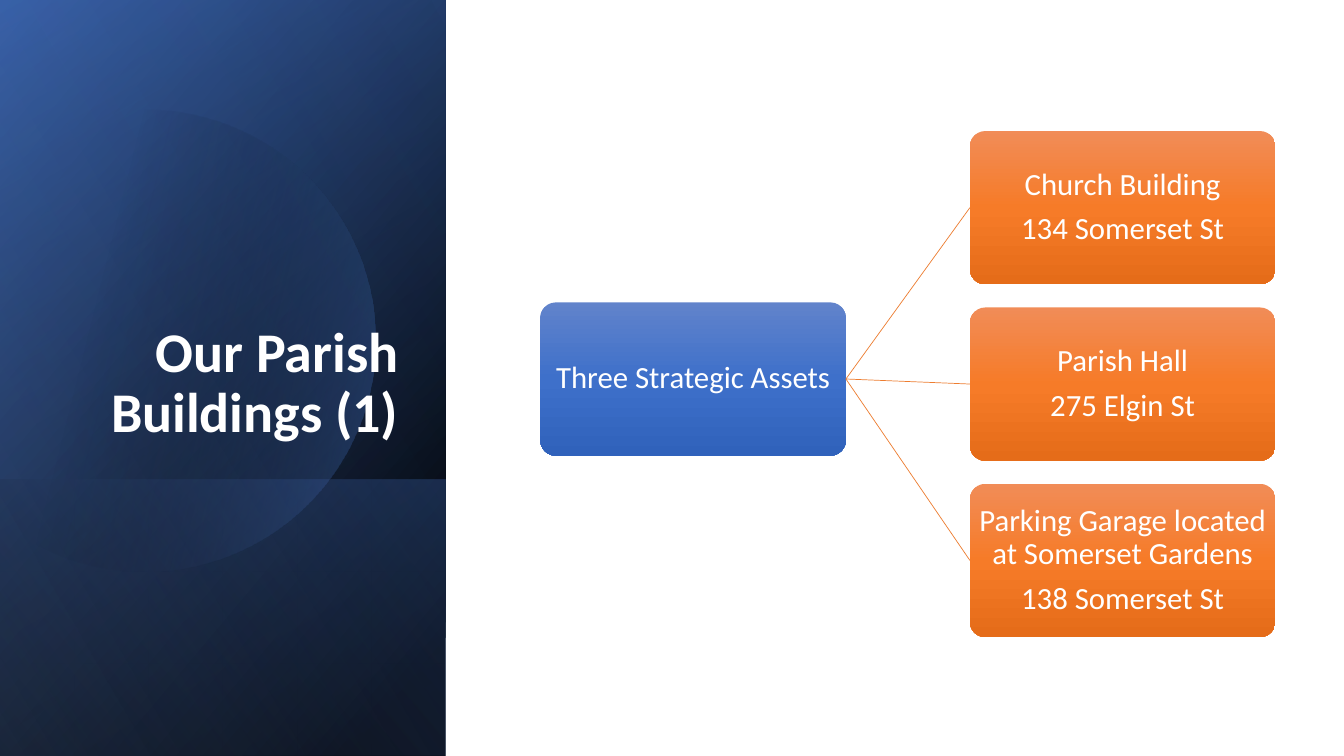
import dataclasses
import math

import pptx
import pptx.dml.color
import pptx.enum.shapes
import pptx.enum.text
import pptx.oxml.ns
import pptx.oxml.xmlchemy
import pptx.util
from lxml import etree

Inches = pptx.util.Inches
Pt = pptx.util.Pt
qn = pptx.oxml.ns.qn
Shapes = pptx.enum.shapes.MSO_SHAPE
Align = pptx.enum.text.PP_ALIGN
Anchor = pptx.enum.text.MSO_ANCHOR


@dataclasses.dataclass(frozen=True)
class Theme:
    font: str = "Calibri"
    title_size: int = 40
    box_size: int = 22
    text: str = "FFFFFF"
    line: str = "ED7D31"
    blue: tuple = ((0, "6183CB"), (50, "3E70CA"), (100, "3062BB"))
    orange: tuple = ((0, "F18C57"), (50, "F67B28"), (100, "E56C19"))
    base: tuple = ((8, "000000"), (100, "2F5597"))
    glow: tuple = ((0, "000000", 0), (99, "4472C4", 46))
    footer: tuple = ((2, "4472C4", 29), (100, "000000", 30))
    disc: tuple = ((29, "000000", 0), (100, "4472C4", 43))
    sheen: tuple = ((0, "000000", 0), (99, "8FAADC", 11))


THEME = Theme()
PANEL_WIDTH = 4.42
PAGE_HEIGHT = 7.5
BOX_WIDTH, BOX_HEIGHT, BOX_GAP = 3.03, 1.52, 0.23


def fill_gradient(shape, stops, angle):
    shape.shadow.inherit = False
    shape.line.fill.background()
    shape.fill.gradient()
    shape.fill.gradient_angle = 360 - angle
    stop_list = next(shape.element.iter(qn("a:gsLst")))
    for stop in list(stop_list):
        stop_list.remove(stop)
    for position, color, *opacity in stops:
        stop = etree.SubElement(stop_list, qn("a:gs"), pos=str(position * 1000))
        tone = etree.SubElement(stop, qn("a:srgbClr"), val=color)
        for percent in opacity:
            etree.SubElement(tone, qn("a:alpha"), val=str(percent * 1000))


def add_panel(page, top, stops, angle):
    height = PAGE_HEIGHT - top
    panel = page.shapes.add_shape(
        Shapes.RECTANGLE,
        Inches((PANEL_WIDTH - height) / 2),
        Inches(top + (height - PANEL_WIDTH) / 2),
        Inches(height),
        Inches(PANEL_WIDTH),
    )
    panel.rotation = 90
    panel.element.spPr.find(qn("a:xfrm")).set("flipH", "1")
    fill_gradient(panel, stops, angle)


def add_disc(page, center_x, center_y, radius):
    limit = math.acos(-center_x / radius)
    steps = 120
    angles = [limit * (2 * step / steps - 1) for step in range(steps + 1)]
    points = [
        (Inches(center_x + radius * math.cos(angle)),
         Inches(center_y + radius * math.sin(angle)))
        for angle in angles
    ]
    builder = page.shapes.build_freeform(*points[0])
    builder.add_line_segments(points[1:], close=True)
    fill_gradient(builder.convert_to_shape(), THEME.disc, 14)


def write(box, lines, size, align, anchor, bold=False, space_after=0):
    frame = box.text_frame
    frame.word_wrap = True
    frame.vertical_anchor = anchor
    frame.text = "\n".join(lines)
    for para in frame.paragraphs:
        para.alignment = align
        para.line_spacing = 0.9
        para.space_after = Pt(space_after)
        para.font.name = THEME.font
        para.font.size = Pt(size)
        para.font.bold = bold
        para.font.color.rgb = pptx.dml.color.RGBColor.from_string(THEME.text)


def add_title(page, text):
    box = page.shapes.add_textbox(Inches(0.64), Inches(1.84), Inches(3.41), Inches(2.62))
    write(box, [text], THEME.title_size, Align.RIGHT, Anchor.BOTTOM, bold=True)


def add_box(page, left, top, lines, stops):
    box = page.shapes.add_shape(
        Shapes.ROUNDED_RECTANGLE,
        Inches(left), Inches(top), Inches(BOX_WIDTH), Inches(BOX_HEIGHT),
    )
    box.adjustments[0] = 0.1
    fill_gradient(box, stops, 90)
    frame = box.text_frame
    frame.margin_left = frame.margin_right = Inches(0.02)
    frame.margin_top = frame.margin_bottom = Inches(0.02)
    write(box, lines, THEME.box_size, Align.CENTER, Anchor.MIDDLE, space_after=7.7)
    return box


def join(page, parent, child):
    link = page.shapes.add_connector(pptx.enum.shapes.MSO_CONNECTOR.STRAIGHT, 0, 0, 0, 0)
    link.begin_connect(parent, 3)
    link.end_connect(child, 1)
    link.line.width = Pt(0.5)
    link.line.color.rgb = pptx.dml.color.RGBColor.from_string(THEME.line)
    etree.SubElement(link.element.spPr, qn("a:effectLst"))


def main():
    deck = pptx.Presentation()
    deck.slide_width = Inches(13.33)
    deck.slide_height = Inches(PAGE_HEIGHT)
    page = deck.slides.add_slide(deck.slide_layouts[6])

    add_panel(page, 0, THEME.base, 50)
    add_panel(page, 0, THEME.glow, 30)
    add_panel(page, 4.76, THEME.footer, 130)
    add_disc(page, 1.43, 3.38, 2.29)
    add_panel(page, 0, THEME.sheen, 120)
    add_title(page, "Our Parish Buildings (1)")

    assets = [
        ["Church Building", "134 Somerset St"],
        ["Parish Hall", "275 Elgin St"],
        ["Parking Garage located at Somerset Gardens", "138 Somerset St"],
    ]
    root = add_box(page, 5.36, 3, ["Three Strategic Assets"], THEME.blue)
    for row, lines in enumerate(assets):
        top = 1.3 + row * (BOX_HEIGHT + BOX_GAP)
        join(page, root, add_box(page, 9.62, top, lines, THEME.orange))

    deck.save("out.pptx")


if __name__ == "__main__":
    main()
